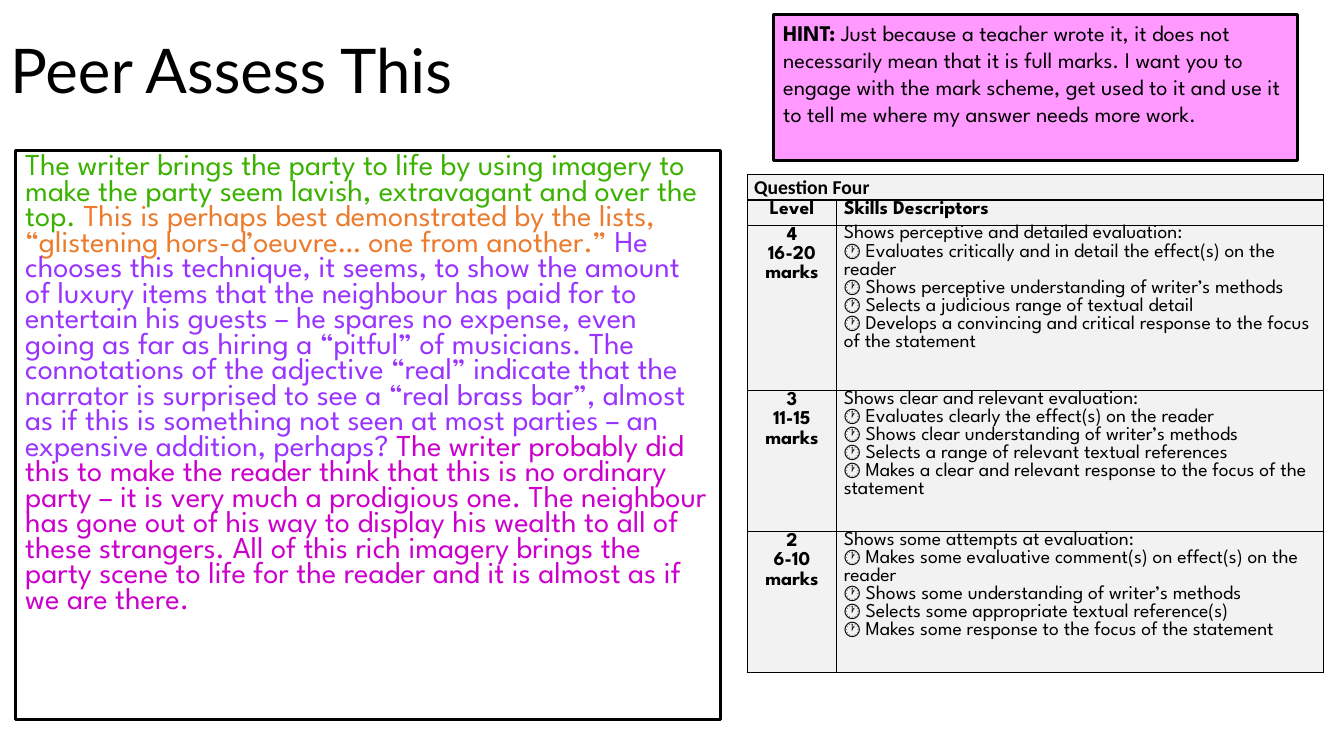
from lxml.etree import SubElement
from pptx import Presentation
from pptx.dml.color import RGBColor
from pptx.enum.shapes import MSO_SHAPE
from pptx.enum.text import MSO_ANCHOR, MSO_AUTO_SIZE, PP_ALIGN
from pptx.oxml.ns import qn
from pptx.util import Inches, Pt

TITLE = "Peer Assess This"
ANSWER = [
    ("The writer brings the party to life by using imagery to make the party seem lavish, "
     "extravagant and over the top. ", "point"),
    ("This is perhaps best demonstrated by the lists, “glistening hors-d’oeuvre… one from "
     "another.” ", "evidence"),
    ("He chooses this technique, it seems, to show the amount of luxury items that the "
     "neighbour has paid for to entertain his guests – he spares no expense, even going as far "
     "as hiring a “pitful” of musicians. The connotations of the adjective “real” indicate that "
     "the narrator is surprised to see a “real brass bar”, almost as if this is something not "
     "seen at most parties – an expensive addition, perhaps? ", "analysis"),
    ("The writer probably did this to make the reader think that this is no ordinary party – it "
     "is very much a prodigious one. The neighbour has gone out of his way to display his wealth "
     "to all of these strangers. All of this rich imagery brings the party scene to life for the "
     "reader and it is almost as if we are there.", "effect"),
]
HINT = [
    ("HINT:", True),
    (" Just because a teacher wrote it, it does not necessarily mean that it is full marks. I "
     "want you to engage with the mark scheme, get used to it and use it to tell me where my "
     "answer needs more work.", False),
]
SCHEME_TITLE = "Question Four"
SCHEME_HEADS = ["Level", "Skills Descriptors"]
LEVELS = [
    ("4", "16-20 marks", "Shows perceptive and detailed evaluation:", [
        "Evaluates critically and in detail the effect(s) on the reader",
        "Shows perceptive understanding of writer’s methods",
        "Selects a judicious range of textual detail",
        "Develops a convincing and critical response to the focus of the statement"]),
    ("3", "11-15 marks", "Shows clear and relevant evaluation:", [
        "Evaluates clearly the effect(s) on the reader",
        "Shows clear understanding of writer’s methods",
        "Selects a range of relevant textual references",
        "Makes a clear and relevant response to the focus of the statement"]),
    ("2", "6-10 marks", "Shows some attempts at evaluation:", [
        "Makes some evaluative comment(s) on effect(s) on the reader",
        "Shows some understanding of writer’s methods",
        "Selects some appropriate textual reference(s)",
        "Makes some response to the focus of the statement"]),
]
MARKER = "🕐 "
COLUMN_WIDTHS = [0.89, 4.83]
ROW_HEIGHTS = [0.25, 0.25, 1.64, 1.4, 1.4]

THEME = {
    "ink": "000000", "paper": "FFFFFF", "hint": "FF99FF", "cell": "F2F2F2",
    "point": "3BB200", "evidence": "EC7B2D", "analysis": "9933FF", "effect": "CC00CC",
    "title_font": "Lato", "text_font": "League Spartan", "scheme_font": "Calibri",
    "title_size": 44, "answer_size": 21.7, "hint_size": 16, "scheme_size": 14,
    "outline": 2, "border": 1,
}


def color(name):
    return RGBColor.from_string(THEME[name])


def set_values(target, values):
    for name, value in values.items():
        setattr(target, name, value)


def place(shape, left, top, width, height):
    set_values(shape, {"left": Inches(left), "top": Inches(top),
                       "width": Inches(width), "height": Inches(height)})


def add_span(para, text, size, font="text_font", ink="ink", bold=False):
    span = para.add_run()
    span.text = text
    set_values(span.font, {"name": THEME[font], "size": Pt(THEME[size]), "bold": bold})
    span.font.color.rgb = color(ink)


def outline_box(shape, fill):
    shape.fill.solid()
    shape.fill.fore_color.rgb = color(fill)
    shape.line.color.rgb = color("ink")
    shape.line.width = Pt(THEME["outline"])


def border_cell(cell):
    properties = cell._tc.get_or_add_tcPr()
    for position, side in enumerate(("lnL", "lnR", "lnT", "lnB")):
        line = properties.makeelement(qn(f"a:{side}"), {"w": str(Pt(THEME["border"]))})
        fill = SubElement(line, qn("a:solidFill"))
        SubElement(fill, qn("a:srgbClr"), val=THEME["ink"])
        properties.insert(position, line)


def fill_cell(cell, lines, font="text_font", bold=True, align=PP_ALIGN.LEFT, spacing=1.07):
    set_values(cell, {"margin_left": Inches(0.07), "margin_right": Inches(0.07),
                      "margin_top": 0, "margin_bottom": 0})
    cell.fill.solid()
    cell.fill.fore_color.rgb = color("cell")
    border_cell(cell)
    frame = cell.text_frame
    for index, text in enumerate(lines):
        para = frame.add_paragraph() if index else frame.paragraphs[0]
        set_values(para, {"alignment": align, "line_spacing": spacing})
        add_span(para, text, "scheme_size", font, bold=bold)


def add_title(page):
    title = page.shapes.title
    place(title, 0, 0, 11.5, 1.45)
    set_values(title.text_frame, {"vertical_anchor": MSO_ANCHOR.MIDDLE,
                                  "auto_size": MSO_AUTO_SIZE.NONE})
    para = title.text_frame.paragraphs[0]
    set_values(para, {"alignment": PP_ALIGN.LEFT, "line_spacing": 0.9})
    add_span(para, TITLE, "title_size", "title_font")


def add_answer(page):
    box = page.placeholders[1]
    place(box, 0.15, 1.49, 7, 5.65)
    outline_box(box, "paper")
    box.text_frame.auto_size = MSO_AUTO_SIZE.NONE
    para = box.text_frame.paragraphs[0]
    set_values(para, {"line_spacing": 0.7, "space_before": Pt(10)})
    properties = para._p.get_or_add_pPr()
    properties.set("marL", "0")
    properties.set("indent", "0")
    SubElement(properties, qn("a:buNone"))
    for text, ink in ANSWER:
        add_span(para, text, "answer_size", ink=ink)


def add_hint(page):
    box = page.shapes.add_shape(MSO_SHAPE.RECTANGLE, Inches(7.67), Inches(0.14),
                                Inches(5.2), Inches(1.45))
    box.shadow.inherit = False
    outline_box(box, "hint")
    set_values(box.text_frame, {"word_wrap": True, "vertical_anchor": MSO_ANCHOR.TOP})
    para = box.text_frame.paragraphs[0]
    set_values(para, {"alignment": PP_ALIGN.LEFT, "line_spacing": 1.0})
    for text, bold in HINT:
        add_span(para, text, "hint_size", bold=bold)


def add_scheme(page):
    table = page.shapes.add_table(len(ROW_HEIGHTS), len(COLUMN_WIDTHS), Inches(7.41), Inches(1.73),
                                  Inches(sum(COLUMN_WIDTHS)), Inches(sum(ROW_HEIGHTS))).table
    set_values(table, {"first_row": False, "horz_banding": False})
    for column, width in zip(table.columns, COLUMN_WIDTHS):
        column.width = Inches(width)
    for row, height in zip(table.rows, ROW_HEIGHTS):
        row.height = Inches(height)
    table.cell(0, 0).merge(table.cell(0, 1))
    fill_cell(table.cell(0, 0), [SCHEME_TITLE], "scheme_font")
    border_cell(table.cell(0, 1))
    fill_cell(table.cell(1, 0), SCHEME_HEADS[:1], align=PP_ALIGN.CENTER)
    fill_cell(table.cell(1, 1), SCHEME_HEADS[1:])
    for row, (level, marks, summary, skills) in enumerate(LEVELS, start=2):
        fill_cell(table.cell(row, 0), [level, marks], align=PP_ALIGN.CENTER)
        descriptors = [summary] + [MARKER + skill for skill in skills]
        fill_cell(table.cell(row, 1), descriptors, bold=False, spacing=1.0)


def main():
    deck = Presentation()
    set_values(deck, {"slide_width": Inches(13.33), "slide_height": Inches(7.5)})
    page = deck.slides.add_slide(deck.slide_layouts[1])
    for add_part in (add_title, add_answer, add_hint, add_scheme):
        add_part(page)
    deck.save("out.pptx")


if __name__ == "__main__":
    main()
